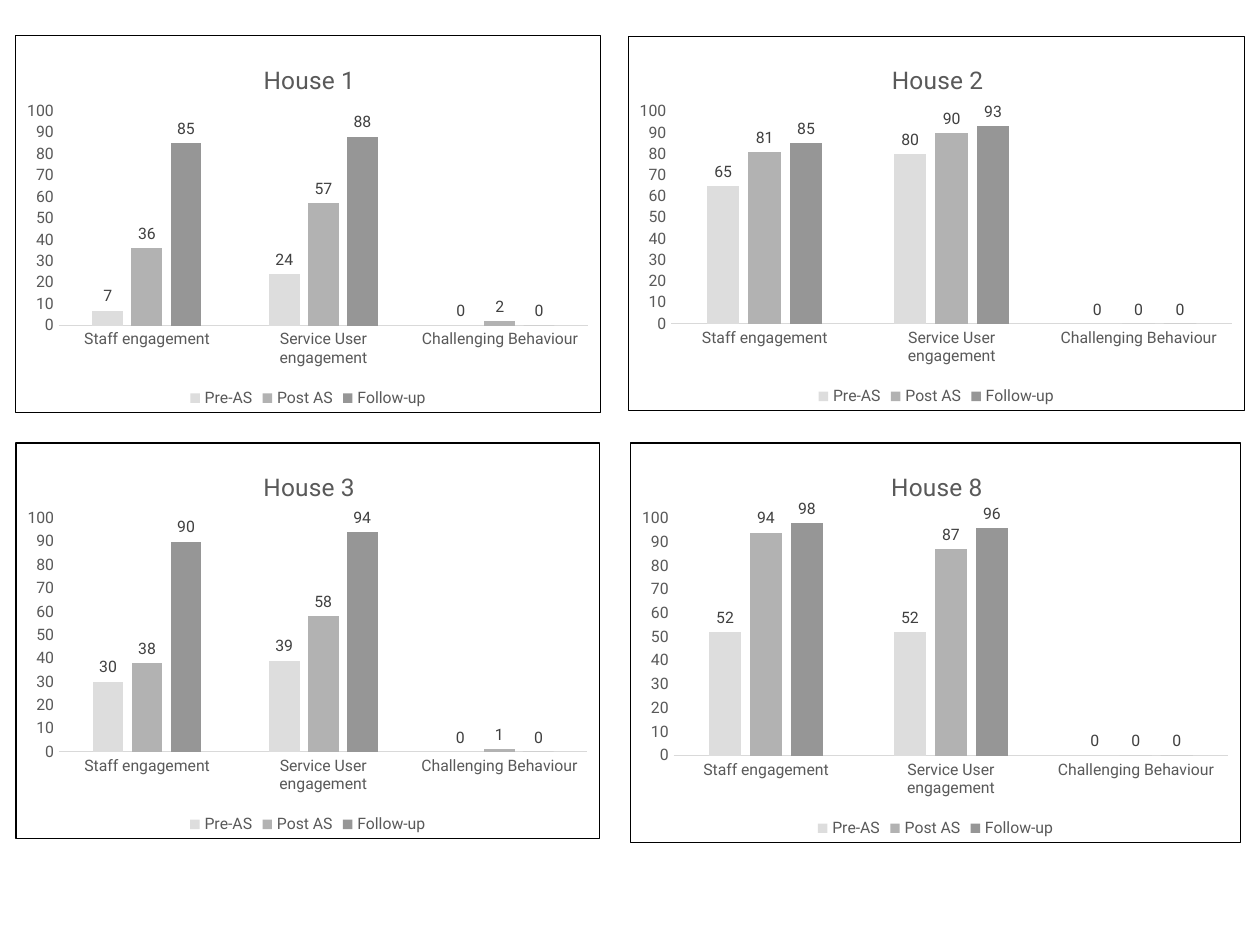
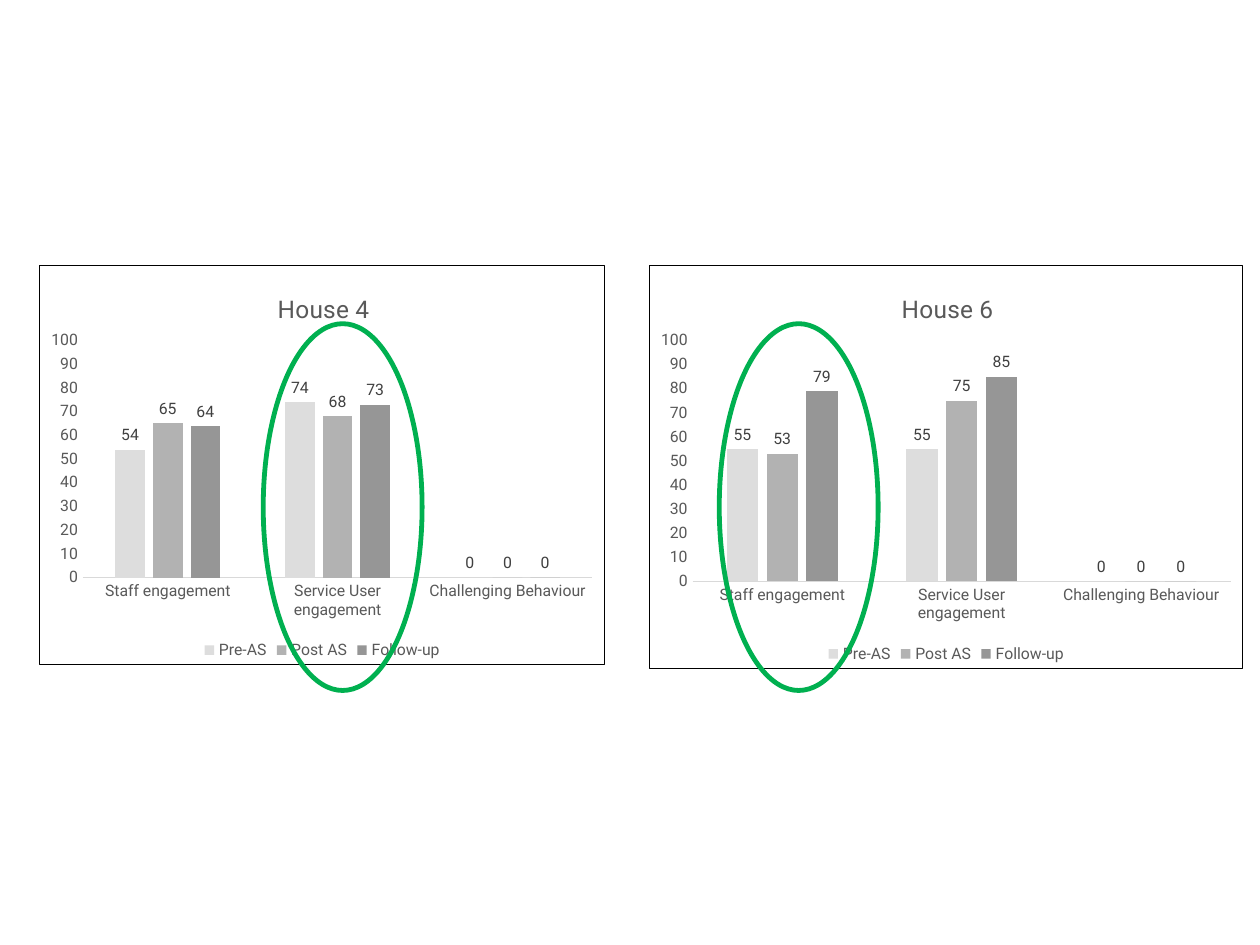
import pptx
import pptx.chart.data
import pptx.dml.color
import pptx.enum.chart
import pptx.enum.shapes
import pptx.oxml
import pptx.oxml.ns
import pptx.util

Pt = pptx.util.Pt
RGBColor = pptx.dml.color.RGBColor
xl = pptx.enum.chart

FONT = "Roboto"
BLACK = RGBColor(0x00, 0x00, 0x00)
TEXT_GREY = RGBColor(0x59, 0x59, 0x59)
LABEL_GREY = RGBColor(0x40, 0x40, 0x40)
AXIS_GREY = RGBColor(0xD9, 0xD9, 0xD9)
RING_GREEN = RGBColor(0x00, 0xB0, 0x50)
PHASES = {
    "Pre-AS": RGBColor(0xDD, 0xDD, 0xDD),
    "Post AS": RGBColor(0xB2, 0xB2, 0xB2),
    "Follow-up": RGBColor(0x96, 0x96, 0x96),
}
MEASURES = ["Staff engagement", "Service User engagement", "Challenging Behaviour"]

# Margins of the plot area inside each chart, in points
PLOT_LEFT, PLOT_TOP, PLOT_RIGHT, PLOT_BOTTOM = 24.6, 43.2, 6.9, 49.7
TITLE_WIDTH, TITLE_TOP = 56, 13

# Per house: box (left, top, width, height), then one row of values per phase
ENGAGEMENT_HOUSES = [
    ("House 1", (8.6, 20, 334.8, 216), [(7, 24, 0), (36, 57, 2), (85, 88, 0)]),
    ("House 2", (358.6, 20.4, 352.8, 214.6), [(65, 80, 0), (81, 90, 0), (85, 93, 0)]),
    ("House 3", (8.8, 252.8, 334.2, 226.8), [(30, 39, 0), (38, 58, 1), (90, 94, 0)]),
    ("House 8", (360, 252.8, 349.2, 229), [(52, 52, 0), (94, 87, 0), (98, 96, 0)]),
]
RINGED_HOUSES = [
    ("House 4", (22.4, 151.2, 323.4, 228.8), [(54, 74, 0), (65, 68, 0), (64, 73, 0)]),
    ("House 6", (370.8, 151.2, 339.8, 231), [(55, 55, 0), (53, 75, 0), (79, 85, 0)]),
]
RING_LEFTS = [150.4, 411]
RING_TOP, RING_WIDTH, RING_HEIGHT = 185, 90.8, 209.6


def style_font(font, size=9, color=TEXT_GREY):
    font.name = FONT
    font.size = Pt(size)
    font.bold = False
    font.color.rgb = color


def write_text(tf, text, **style):
    r = tf.paragraphs[0].add_run()
    r.text = text
    style_font(r.font, **style)


def set_layout(parent, inner=False, **fractions):
    """Fix the place of a chart part, as fractions of the chart."""
    for old in parent.findall(pptx.oxml.ns.qn("c:layout")):
        parent.remove(old)
    target = '<c:layoutTarget val="inner"/>' if inner else ""
    modes = "".join(f'<c:{key}Mode val="edge"/>' for key in "xy")
    values = "".join(f'<c:{key} val="{value:.4f}"/>' for key, value in fractions.items())
    layout = pptx.oxml.parse_xml(
        f'<c:layout {pptx.oxml.ns.nsdecls("c")}><c:manualLayout>'
        f"{target}{modes}{values}</c:manualLayout></c:layout>")
    text = parent.find(pptx.oxml.ns.qn("c:tx"))
    if text is None:
        parent.insert(0, layout)
    else:
        text.addnext(layout)


def add_border(chart):
    border = pptx.oxml.parse_xml(
        f'<c:spPr {pptx.oxml.ns.nsdecls("c", "a")}><a:noFill/>'
        f'<a:ln w="{Pt(0.75)}"><a:solidFill><a:srgbClr val="{BLACK}"/></a:solidFill></a:ln>'
        "</c:spPr>")
    chart.element.find(pptx.oxml.ns.qn("c:chart")).addnext(border)


def style_axes(chart):
    for axis in (chart.category_axis, chart.value_axis):
        axis.major_tick_mark = axis.minor_tick_mark = xl.XL_TICK_MARK.NONE
        axis.has_major_gridlines = False
        style_font(axis.tick_labels.font)
    line = chart.category_axis.format.line
    line.color.rgb = AXIS_GREY
    line.width = Pt(0.75)
    scale = chart.value_axis
    scale.minimum_scale, scale.maximum_scale, scale.major_unit = 0, 100, 10
    scale.format.line.fill.background()


def style_columns(plot):
    plot.gap_width = 219
    plot.overlap = -27
    plot.vary_by_categories = False
    for series, color in zip(plot.series, PHASES.values()):
        series.format.fill.solid()
        series.format.fill.fore_color.rgb = color
        series.invert_if_negative = False
        labels = series.data_labels
        labels.show_value = True
        labels.position = xl.XL_LABEL_POSITION.OUTSIDE_END
        style_font(labels.font, color=LABEL_GREY)


def add_house_chart(slide, title, box, rows):
    left, top, width, height = box
    data = pptx.chart.data.CategoryChartData()
    data.categories = MEASURES
    for phase, values in zip(PHASES, rows):
        data.add_series(phase, values)
    chart = slide.shapes.add_chart(
        xl.XL_CHART_TYPE.COLUMN_CLUSTERED,
        Pt(left), Pt(top), Pt(width), Pt(height), data).chart
    style_font(chart.font, size=10, color=BLACK)
    add_border(chart)

    chart.has_title = True
    write_text(chart.chart_title.text_frame, title, size=14)
    chart.chart_title.include_in_layout = False
    set_layout(chart.chart_title._element,
               x=(width - TITLE_WIDTH) / 2 / width, y=TITLE_TOP / height)

    chart.has_legend = True
    chart.legend.position = xl.XL_LEGEND_POSITION.BOTTOM
    chart.legend.include_in_layout = False
    style_font(chart.legend.font)

    style_axes(chart)
    style_columns(chart.plots[0])
    set_layout(chart.element.find(".//" + pptx.oxml.ns.qn("c:plotArea")), inner=True,
               x=PLOT_LEFT / width, y=PLOT_TOP / height,
               w=(width - PLOT_LEFT - PLOT_RIGHT) / width,
               h=(height - PLOT_TOP - PLOT_BOTTOM) / height)


def add_ring(slide, left):
    sp = slide.shapes.add_shape(
        pptx.enum.shapes.MSO_SHAPE.OVAL,
        Pt(left), Pt(RING_TOP), Pt(RING_WIDTH), Pt(RING_HEIGHT))
    sp.shadow.inherit = False
    sp.fill.background()
    sp.line.color.rgb = RING_GREEN
    sp.line.width = Pt(2.75)


def add_chart_slide(prs, houses, ring_lefts=()):
    slide = prs.slides.add_slide(prs.slide_layouts[6])
    for title, box, rows in houses:
        add_house_chart(slide, title, box, rows)
    for left in ring_lefts:
        add_ring(slide, left)


def main():
    prs = pptx.Presentation()
    prs.slide_width, prs.slide_height = Pt(720), Pt(540)
    add_chart_slide(prs, ENGAGEMENT_HOUSES)
    add_chart_slide(prs, RINGED_HOUSES, RING_LEFTS)
    prs.save("out.pptx")


if __name__ == "__main__":
    main()
